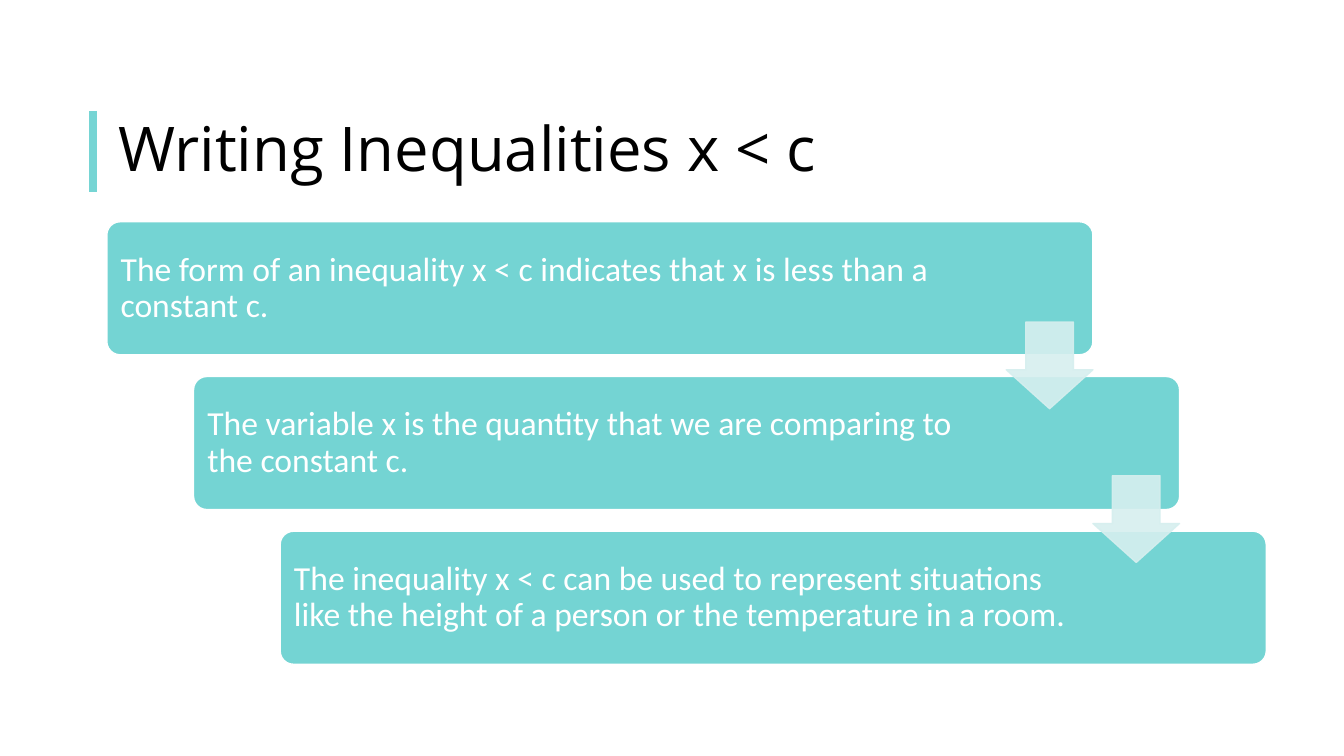
from pptx import Presentation
from pptx.dml.color import RGBColor
from pptx.enum.shapes import MSO_CONNECTOR as Connector, MSO_SHAPE as Shape
from pptx.enum.text import MSO_ANCHOR as Anchor, MSO_AUTO_SIZE as AutoSize, PP_ALIGN as Align
from pptx.oxml.ns import qn
from pptx.util import Inches, Pt
from lxml.etree import SubElement


def color(hex_text):
    return RGBColor.from_string(hex_text)


class StepPage:
    heading_font = "Open Sans"
    body_font = "Calibri"
    accent = "76D5D4"
    card_fill = "74D4D3"
    arrow_fill = "D6EFEF"
    white = "FFFFFF"

    def __init__(self, deck):
        self.width, self.height = deck.slide_width, deck.slide_height
        self.page = deck.slides.add_slide(deck.slide_layouts[5])

    def across(self, percent):
        return round(self.width * percent / 100)

    def down(self, percent):
        return round(self.height * percent / 100)

    def area(self, left, top, width, height):
        return self.across(left), self.down(top), self.across(width), self.down(height)

    def set_text(self, box, text, font_name, size, ink):
        frame = box.text_frame
        frame.text = text
        frame.word_wrap = True
        frame.auto_size = AutoSize.NONE
        frame.vertical_anchor = Anchor.MIDDLE
        para = frame.paragraphs[0]
        para.alignment = Align.LEFT
        para.line_spacing = 0.9
        para.font.name = font_name
        para.font.size = Pt(size)
        para.font.color.rgb = color(ink)
        return frame

    def title(self, text, left, top, width, height):
        box = self.page.shapes.title
        box.left, box.top, box.width, box.height = self.area(left, top, width, height)
        self.set_text(box, text, self.heading_font, 44, "000000")

    def bar(self, left, top, height):
        x = self.across(left)
        line = self.page.shapes.add_connector(
            Connector.STRAIGHT, x, self.down(top), x, self.down(top + height))
        line.line.color.rgb = color(self.accent)
        line.line.width = Pt(6)
        SubElement(line.element.spPr, qn("a:effectLst"))

    def block(self, kind, area, adjustments, fill, outline):
        block = self.page.shapes.add_shape(kind, *self.area(*area))
        block.shadow.inherit = False
        for index, value in enumerate(adjustments):
            block.adjustments[index] = value
        block.fill.solid()
        block.fill.fore_color.rgb = color(fill)
        block.line.color.rgb = color(outline)
        block.line.width = Pt(1)
        return block

    def card(self, text, area, right_margin):
        card = self.block(Shape.ROUNDED_RECTANGLE, area, [0.1], self.card_fill, self.white)
        frame = self.set_text(card, text, self.body_font, 24, self.white)
        frame.margin_left = Inches(0.1)
        frame.margin_right = self.across(right_margin)

    def arrow(self, area):
        arrow = self.block(Shape.DOWN_ARROW, area, [0.55, 0.45], self.arrow_fill, self.arrow_fill)
        for tint in arrow.element.spPr.iter(qn("a:srgbClr")):
            SubElement(tint, qn("a:alpha")).set("val", "90000")


def main():
    deck = Presentation()
    deck.slide_width, deck.slide_height = Inches(13.33), Inches(7.5)
    page = StepPage(deck)
    page.bar(6.9, 14.67, 10.67)
    page.title("Writing Inequalities x < c", 8.03, 14.67, 86.27, 10.67)

    steps = [
        ("The form of an inequality x < c indicates that x is less than a constant c.", 10.9),
        ("The variable x is the quantity that we are comparing to the constant c.", 13.65),
        ("The inequality x < c can be used to represent situations like the height "
         "of a person or the temperature in a room.", 13.65),
    ]
    shift = 6.45
    for index, (text, right_margin) in enumerate(steps):
        page.card(text, (7.95 + index * shift, 29.33 + index * 20.47, 73.37, 17.6), right_margin)
    for index in range(len(steps) - 1):
        page.arrow((74.87 + index * shift, 42.6 + index * 20.33, shift, 11.47))

    deck.save("out.pptx")


if __name__ == "__main__":
    main()
